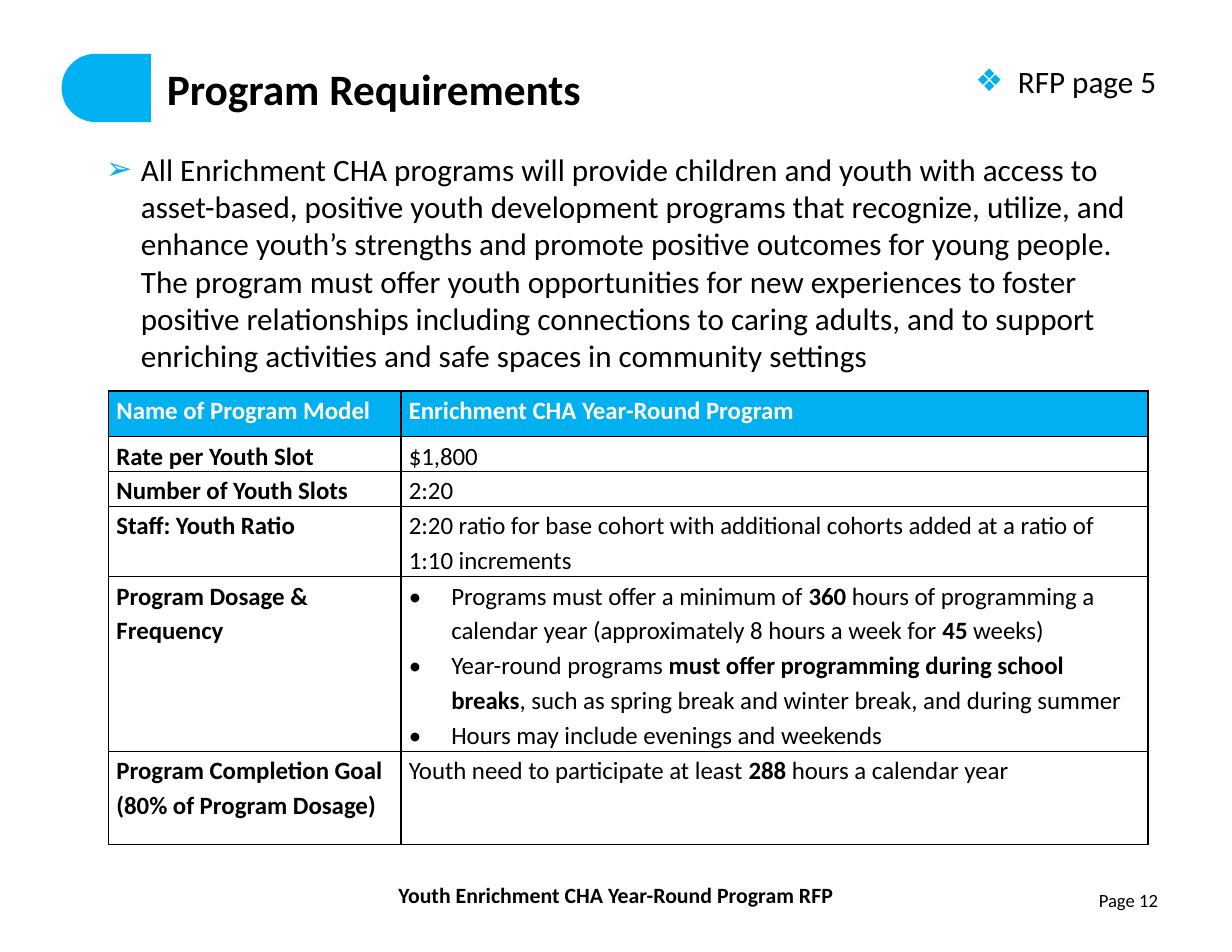
"""Build the Program Requirements slide with its program model table."""
from lxml.etree import SubElement
from pptx import Presentation
from pptx.dml.color import RGBColor
from pptx.enum.shapes import MSO_SHAPE as Shape
from pptx.enum.text import MSO_ANCHOR as Anchor, PP_ALIGN as Align
from pptx.oxml import parse_xml
from pptx.oxml.ns import nsdecls, qn
from pptx.util import Inches, Pt

BLUE = RGBColor(0x00, 0xB0, 0xF0)
BLACK = RGBColor(0x00, 0x00, 0x00)
WHITE = RGBColor(0xFF, 0xFF, 0xFF)
FONT = "Calibri"

TITLE = "Program Requirements"
REFERENCE = "RFP page 5"
FOOTER = "Youth Enrichment CHA Year-Round Program RFP"
PAGE_LABEL = "Page 12"
INTRO = (
    "All Enrichment CHA programs will provide children and youth with access to "
    "asset-based, positive youth development programs that recognize, utilize, and "
    "enhance youth’s strengths and promote positive outcomes for young people. "
    "The program must offer youth opportunities for new experiences to foster "
    "positive relationships including connections to caring adults, and to support "
    "enriching activities and safe spaces in community settings"
)
DOSAGE = [
    "Programs must offer a minimum of **360** hours of programming a calendar year "
    "(approximately 8 hours a week for **45** weeks)",
    "Year-round programs **must offer programming during school breaks**, such as "
    "spring break and winter break, and during summer",
    "Hours may include evenings and weekends",
]
ROWS = [
    (0.41, "Name of Program Model", ["**Enrichment CHA Year-Round Program**"]),
    (0.31, "Rate per Youth Slot", ["$1,800"]),
    (0.31, "Number of Youth Slots", ["2:20"]),
    (0.63, "Staff: Youth Ratio", [
        "2:20 ratio for base cohort with additional cohorts added at a ratio of "
        "1:10 increments"]),
    (1.56, "Program Dosage & Frequency", DOSAGE),
    (0.83, "Program Completion Goal (80% of Program Dosage)", [
        "Youth need to participate at least **288** hours a calendar year"]),
]
COLUMNS = [2.61, 6.67]


def add_bullet(para, mark, indent, color=None):
    props = para._p.get_or_add_pPr()
    props.set("marL", str(Inches(indent)))
    props.set("indent", str(-Inches(indent)))
    if color is not None:
        tint = SubElement(props, qn("a:buClr"))
        SubElement(tint, qn("a:srgbClr")).set("val", str(color))
    SubElement(props, qn("a:buFont")).set("typeface", FONT)
    SubElement(props, qn("a:buChar")).set("char", mark)


def write(para, text, size, color=BLACK):
    for index, part in enumerate(text.split("**")):
        if part:
            span = para.add_run()
            span.text = part
            span.font.name, span.font.size = FONT, Pt(size)
            span.font.bold = index % 2 == 1
            span.font.color.rgb = color


def add_text(page, place, text, size, inset=(0.1, 0.05), align=Align.LEFT,
             anchor=Anchor.TOP, bullet=None):
    box = page.shapes.add_textbox(*map(Inches, place))
    frame = box.text_frame
    frame.word_wrap = True
    frame.vertical_anchor = anchor
    frame.margin_left = frame.margin_right = Inches(inset[0])
    frame.margin_top = frame.margin_bottom = Inches(inset[1])
    para = frame.paragraphs[0]
    para.alignment = align
    if bullet:
        add_bullet(para, *bullet, BLUE)
    write(para, text, size)


def add_block(page, kind, place, fill, line=None):
    block = page.shapes.add_shape(kind, *map(Inches, place))
    block.shadow.inherit = False
    block.fill.solid()
    block.fill.fore_color.rgb = fill
    if line is None:
        block.line.fill.background()
    else:
        block.line.color.rgb = line
        block.line.width = Pt(2)
    return block


def fill_cell(cell, texts, header, bulleted):
    cell.margin_left = cell.margin_right = Inches(0.07)
    cell.margin_top = cell.margin_bottom = 0
    if header:
        cell.fill.solid()
        cell.fill.fore_color.rgb = BLUE
    else:
        cell.fill.background()
    for index, text in enumerate(texts):
        frame = cell.text_frame
        para = frame.add_paragraph() if index else frame.paragraphs[0]
        if bulleted:
            add_bullet(para, "•", 0.38)
        para.line_spacing = 1.15
        write(para, text, 16, WHITE if header else BLACK)
    props = cell._tc.get_or_add_tcPr()
    for index, side in enumerate(("lnL", "lnR", "lnT", "lnB")):
        props.insert(index, parse_xml(
            f'<a:{side} {nsdecls("a")} w="{Pt(1)}"><a:solidFill>'
            f'<a:srgbClr val="{BLACK}"/></a:solidFill></a:{side}>'))


def add_program_table(page):
    heights = [row[0] for row in ROWS]
    place = (0.97, 3.49, sum(COLUMNS), sum(heights))
    table = page.shapes.add_table(
        len(ROWS), len(COLUMNS), *map(Inches, place)).table
    table.first_row = table.horz_banding = False
    for column, width in zip(table.columns, COLUMNS):
        column.width = Inches(width)
    for index, (height, label, texts) in enumerate(ROWS):
        table.rows[index].height = Inches(height)
        fill_cell(table.cell(index, 0), [f"**{label}**"], index == 0, False)
        fill_cell(table.cell(index, 1), texts, index == 0, len(texts) > 1)


def main():
    deck = Presentation()
    deck.slide_width, deck.slide_height = Inches(11), Inches(8.5)
    page = deck.slides.add_slide(deck.slide_layouts[6])

    tab = add_block(page, Shape.ROUNDED_RECTANGLE, (0.55, 0.48, 8.44, 0.61), BLUE)
    tab.adjustments[0] = 0.5
    add_block(page, Shape.RECTANGLE, (1.36, 0.41, 7.67, 0.86), WHITE, WHITE)
    add_text(page, (1.38, 0.51, 9.07, 0.55), f"**{TITLE}**", 27.9,
             inset=(0.11, 0.06), anchor=Anchor.MIDDLE)
    add_text(page, (7.88, 7.88, 2.57, 0.45), PAGE_LABEL, 12,
             inset=(0.11, 0.06), align=Align.RIGHT)

    footer = add_block(page, Shape.RECTANGLE, (1.83, 7.67, 7.34, 0.64), WHITE, WHITE)
    footer.text_frame.vertical_anchor = Anchor.MIDDLE
    para = footer.text_frame.paragraphs[0]
    para.alignment = Align.CENTER
    write(para, f"**{FOOTER}**", 14)

    add_program_table(page)
    add_text(page, (0.85, 1.29, 9.4, 2.12), INTRO, 20, bullet=("➢", 0.31))
    add_text(page, (8.61, 0.51, 2.31, 0.44), REFERENCE, 20, bullet=("❖", 0.38))
    deck.save("out.pptx")


if __name__ == "__main__":
    main()
